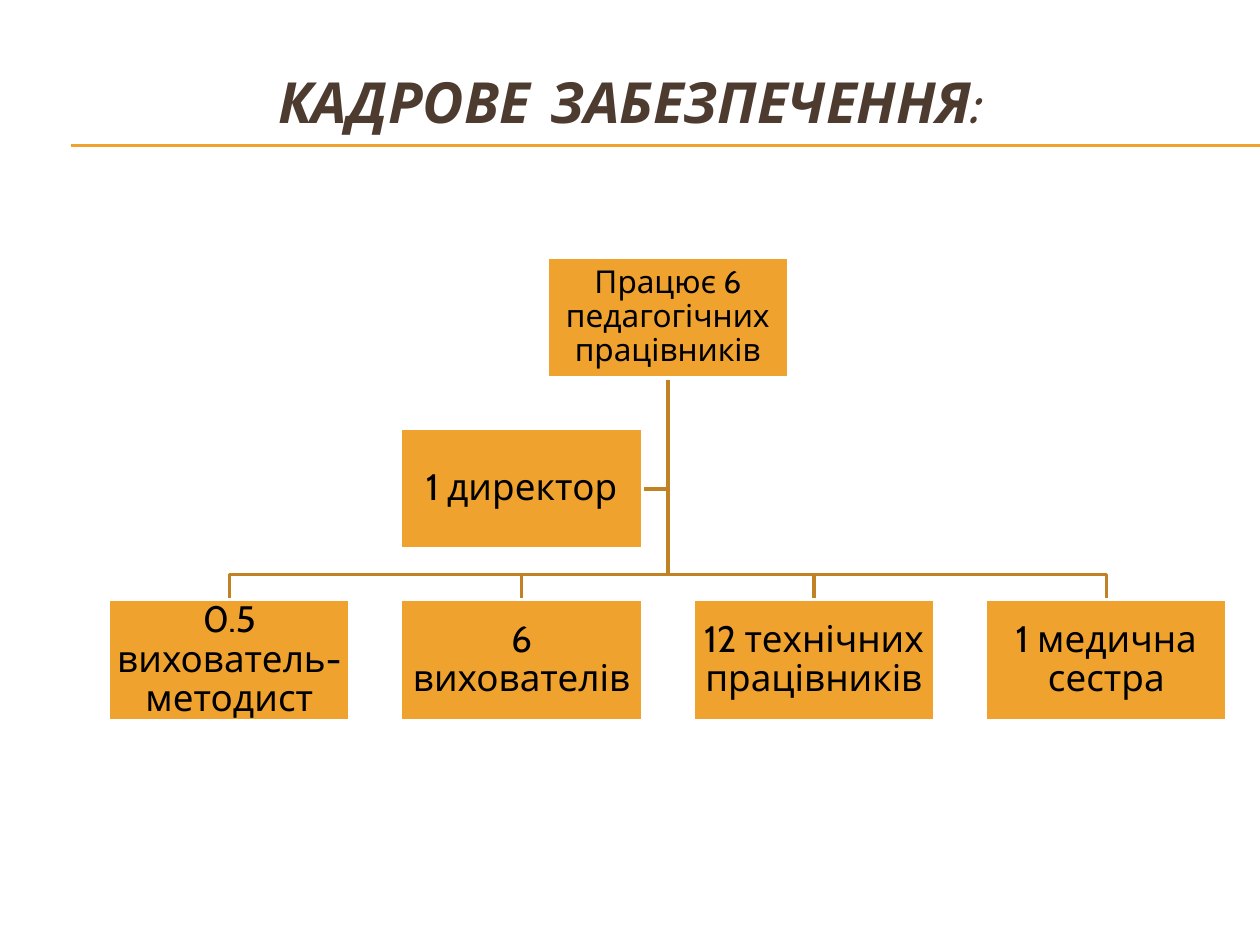
"""Build the staffing slide with its organisation chart."""
import dataclasses

import lxml.etree
import pptx
import pptx.dml.color
import pptx.enum.shapes
import pptx.enum.text
import pptx.oxml.ns
import pptx.util

Inches = pptx.util.Inches
Anchor = pptx.enum.text.MSO_ANCHOR
Align = pptx.enum.text.PP_ALIGN


@dataclasses.dataclass(frozen=True)
class Theme:
    accent: str = "F0A22E"
    branch: str = "C08225"
    outline: str = "FFFFFF"
    title_color: str = "4E3B30"
    text_color: str = "000000"
    title_font: str = "Comic Neue"
    body_font: str = "Cabin"
    title_size: float = 32.4
    head_size: float = 18
    box_size: float = 21
    rule_width: float = 0.75
    line_width: float = 2


class StaffSlide:
    def __init__(self, presentation, theme):
        self.theme = theme
        self.slide = presentation.slides.add_slide(presentation.slide_layouts[6])
        self.shapes = self.slide.shapes

    def apply(self, target, values):
        for name, value in values.items():
            setattr(target, name, value)

    def color(self, value):
        return pptx.dml.color.RGBColor.from_string(value)

    def stroke(self, shape, color, width):
        shape.line.color.rgb = self.color(color)
        shape.line.width = pptx.util.Pt(width)

    def add_text(self, shape, text, color, frame_format, paragraph_format, font_format):
        frame = shape.text_frame
        self.apply(frame, {"word_wrap": True, **frame_format})
        paragraph = frame.paragraphs[0]
        self.apply(paragraph, paragraph_format)
        run = paragraph.add_run()
        run.text = text
        self.apply(run.font, font_format)
        run.font.color.rgb = self.color(color)

    def title(self, text, left, top, width, height):
        shape = self.shapes.add_textbox(*map(Inches, (left, top, width, height)))
        self.add_text(
            shape, text, self.theme.title_color,
            {"vertical_anchor": Anchor.TOP, "margin_top": Inches(0.03)},
            {"alignment": Align.LEFT},
            {"name": self.theme.title_font, "bold": True, "italic": True,
             "size": pptx.util.Pt(self.theme.title_size)},
        )

    def rule(self, left, right, top):
        line = self.shapes.add_connector(
            pptx.enum.shapes.MSO_CONNECTOR.STRAIGHT,
            *map(Inches, (left, top, right, top)))
        self.stroke(line, self.theme.accent, self.theme.rule_width)
        lxml.etree.SubElement(line._element.spPr, pptx.oxml.ns.qn("a:effectLst"))

    def branch(self, points):
        start, *others = [(Inches(x), Inches(y)) for x, y in points]
        builder = self.shapes.build_freeform(*start)
        builder.add_line_segments(others, close=False)
        shape = builder.convert_to_shape()
        shape.shadow.inherit = False
        shape.fill.background()
        self.stroke(shape, self.theme.branch, self.theme.line_width)

    def box(self, text, left, top, width, height, size):
        shape = self.shapes.add_shape(
            pptx.enum.shapes.MSO_SHAPE.RECTANGLE,
            *map(Inches, (left, top, width, height)))
        shape.shadow.inherit = False
        shape.fill.solid()
        shape.fill.fore_color.rgb = self.color(self.theme.accent)
        self.stroke(shape, self.theme.outline, self.theme.line_width)
        margins = {f"margin_{side}": Inches(0.01)
                   for side in ("left", "top", "right", "bottom")}
        self.add_text(
            shape, text, self.theme.text_color,
            {"vertical_anchor": Anchor.MIDDLE, **margins},
            {"alignment": Align.CENTER, "line_spacing": 0.9},
            {"name": self.theme.body_font, "size": pptx.util.Pt(size)},
        )


def main():
    presentation = pptx.Presentation()
    presentation.slide_width = Inches(10)
    presentation.slide_height = Inches(7.5)
    theme = Theme()
    page = StaffSlide(presentation, theme)

    for top in (1.15, 1.16):
        page.rule(0.56, 10, top)
    page.title("КАДРОВЕ ЗАБЕЗПЕЧЕННЯ:", 2.11, 0.5, 7.72, 1.22)

    width, height = 1.92, 0.96
    first_left, step = 0.86, 2.32
    head_top, assistant_top, staff_top = 2.04, 3.4, 4.76
    staff = ["0.5 вихователь-методист", "6 вихователів",
             "12 технічних працівників", "1 медична сестра"]
    lefts = [first_left + step * index for index in range(len(staff))]
    head_left = (lefts[0] + lefts[-1]) / 2
    center, head_bottom = head_left + width / 2, head_top + height
    assistant_left, assistant_middle = lefts[1], assistant_top + height / 2
    bus = staff_top - 0.2

    page.branch([(center, head_bottom), (center, assistant_middle),
                 (assistant_left + width, assistant_middle)])
    for left in reversed(lefts):
        middle = left + width / 2
        page.branch([(center, head_bottom), (center, bus),
                     (middle, bus), (middle, staff_top)])

    page.box("Працює 6 педагогічних працівників",
             head_left, head_top, width, height, theme.head_size)
    for text, left in zip(staff, lefts):
        page.box(text, left, staff_top, width, height, theme.box_size)
    page.box("1 директор", assistant_left, assistant_top, width, height, theme.box_size)

    presentation.save("out.pptx")


if __name__ == "__main__":
    main()
